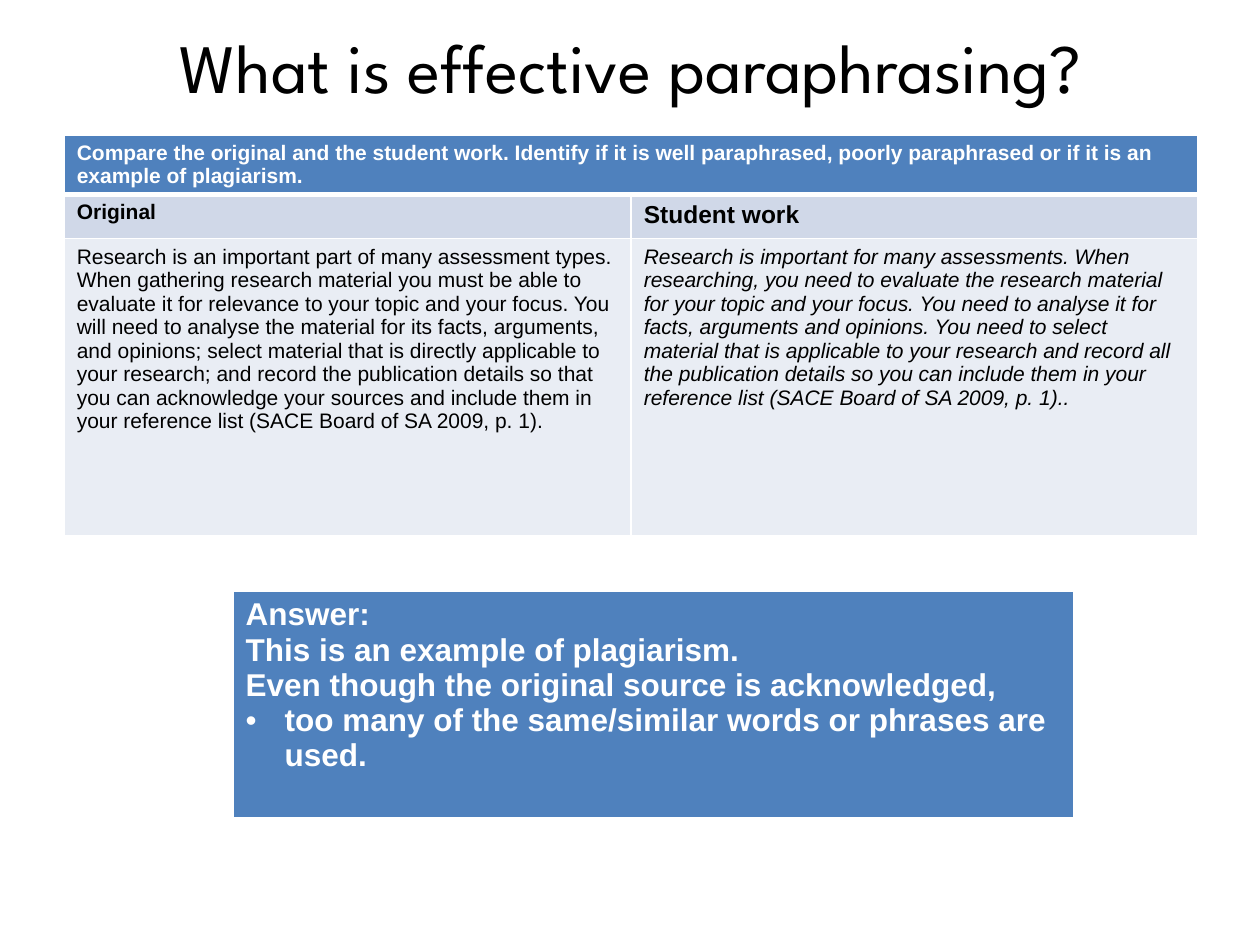
from dataclasses import dataclass

from lxml import etree
from pptx import Presentation
from pptx import util as u
from pptx.dml.color import RGBColor
from pptx.enum import text
from pptx.oxml.ns import qn

PX = 9144  # EMU; 100 px to the inch
COLORS = {
    "white": "FFFFFF",
    "black": "000000",
    "header": "4F81BD",
    "subheader": "D0D8E8",
    "body": "E9EDF4",
}
HEADER_RULE = 3
GRID_RULE = 1
BULLET_INDENT = 31


@dataclass
class Style:
    size: float
    color: str
    name: str = "Arial"
    bold: bool = False
    italic: bool = False


@dataclass
class Line:
    words: str
    bullet: bool = False


@dataclass
class Cell:
    lines: list[Line]
    fill: str
    style: Style
    top: int = GRID_RULE
    bottom: int = GRID_RULE
    columns: int = 1


@dataclass
class Grid:
    left: int
    top: int
    widths: list[int]
    heights: list[int]
    rows: list[list[Cell]]


def px(length: int) -> u.Emu:
    return u.Emu(length * PX)


def add_span(para, words: str, style: Style) -> None:
    span = para.add_run()
    span.text = words
    formats = {"size": u.Pt(style.size), "name": style.name,
               "bold": style.bold, "italic": style.italic}
    for key, value in formats.items():
        setattr(span.font, key, value)
    span.font.color.rgb = RGBColor.from_string(COLORS[style.color])


def add_bullet(para) -> None:
    properties = para._p.get_or_add_pPr()
    properties.set("marL", str(px(BULLET_INDENT)))
    properties.set("indent", str(-px(BULLET_INDENT)))
    etree.SubElement(properties, qn("a:buFont"), typeface="Arial")
    etree.SubElement(properties, qn("a:buChar"), char="•")


def set_borders(cell, top: int, bottom: int) -> None:
    """Draw white borders; they must precede the fill in the cell properties."""
    properties = cell._tc.get_or_add_tcPr()
    widths = {"lnL": GRID_RULE, "lnR": GRID_RULE, "lnT": top, "lnB": bottom}
    for index, (side, width) in enumerate(widths.items()):
        border = etree.Element(qn(f"a:{side}"), w=str(u.Pt(width)))
        fill = etree.SubElement(border, qn("a:solidFill"))
        etree.SubElement(fill, qn("a:srgbClr"), val=COLORS["white"])
        properties.insert(index, border)


def fill_cell(cell, content: Cell) -> None:
    cell.fill.solid()
    cell.fill.fore_color.rgb = RGBColor.from_string(COLORS[content.fill])
    set_borders(cell, content.top, content.bottom)
    frame = cell.text_frame
    for index, line in enumerate(content.lines):
        para = frame.add_paragraph() if index else frame.paragraphs[0]
        if line.bullet:
            add_bullet(para)
        add_span(para, line.words, content.style)


def add_grid(page, grid: Grid) -> None:
    table = page.shapes.add_table(
        len(grid.heights), len(grid.widths), px(grid.left), px(grid.top),
        px(sum(grid.widths)), px(sum(grid.heights))).table
    table.first_row = table.horz_banding = False
    for column, width in zip(table.columns, grid.widths):
        column.width = px(width)
    for row, height in zip(table.rows, grid.heights):
        row.height = px(height)
    for row_index, contents in enumerate(grid.rows):
        for column_index, content in enumerate(contents):
            cell = table.cell(row_index, column_index)
            if content.columns > 1:
                cell.merge(table.cell(row_index, column_index + content.columns - 1))
            fill_cell(cell, content)


def add_title(page, words: str) -> None:
    box = page.shapes.add_textbox(px(20), px(21), px(961), px(63))
    frame = box.text_frame
    frame.word_wrap = True
    frame.vertical_anchor = text.MSO_ANCHOR.MIDDLE
    para = frame.paragraphs[0]
    para.alignment = text.PP_ALIGN.CENTER
    add_span(para, words, Style(39.6, "black", "League Spartan"))


COMPARISON = Grid(51, 107, [450, 450], [44, 35, 236], [
    [Cell([Line("Compare the original and the student work. Identify if it is well "
                "paraphrased, poorly paraphrased or if it is an example of plagiarism.")],
          "header", Style(12, "white", bold=True), bottom=HEADER_RULE, columns=2)],
    [Cell([Line("Original")], "subheader", Style(12, "black", bold=True), top=HEADER_RULE),
     Cell([Line("Student work")], "subheader", Style(14, "black", bold=True),
          top=HEADER_RULE)],
    [Cell([Line("Research is an important part of many assessment types. When gathering "
                "research material you must be able to evaluate it for relevance to your "
                "topic and your focus. You will need to analyse the material for its "
                "facts, arguments, and opinions; select material that is directly "
                "applicable to your research; and record the publication details so that "
                "you can acknowledge your sources and include them in your reference list "
                "(SACE Board of SA 2009, p. 1).")],
          "body", Style(12, "black")),
     Cell([Line("Research is important for many assessments. When researching, you need "
                "to evaluate the research material for your topic and your focus. You "
                "need to analyse it for facts, arguments and opinions. You need to select "
                "material that is applicable to your research and record all the "
                "publication details so you can include them in your reference list "
                "(SACE Board of SA 2009, p. 1)..")],
          "body", Style(12, "black", italic=True))],
])

ANSWER = Grid(185, 469, [667], [181], [
    [Cell([Line("Answer:"),
           Line("This is an example of plagiarism."),
           Line("Even though the original source is acknowledged,"),
           Line("too many of the same/similar words or phrases are used.", bullet=True)],
          "header", Style(18, "white", bold=True), bottom=HEADER_RULE)],
])


def main() -> None:
    deck = Presentation()
    deck.slide_width, deck.slide_height = px(1000), px(750)
    page = deck.slides.add_slide(deck.slide_layouts[6])
    add_grid(page, COMPARISON)
    add_title(page, "What is effective paraphrasing?")
    add_grid(page, ANSWER)
    deck.save("out.pptx")


if __name__ == "__main__":
    main()
